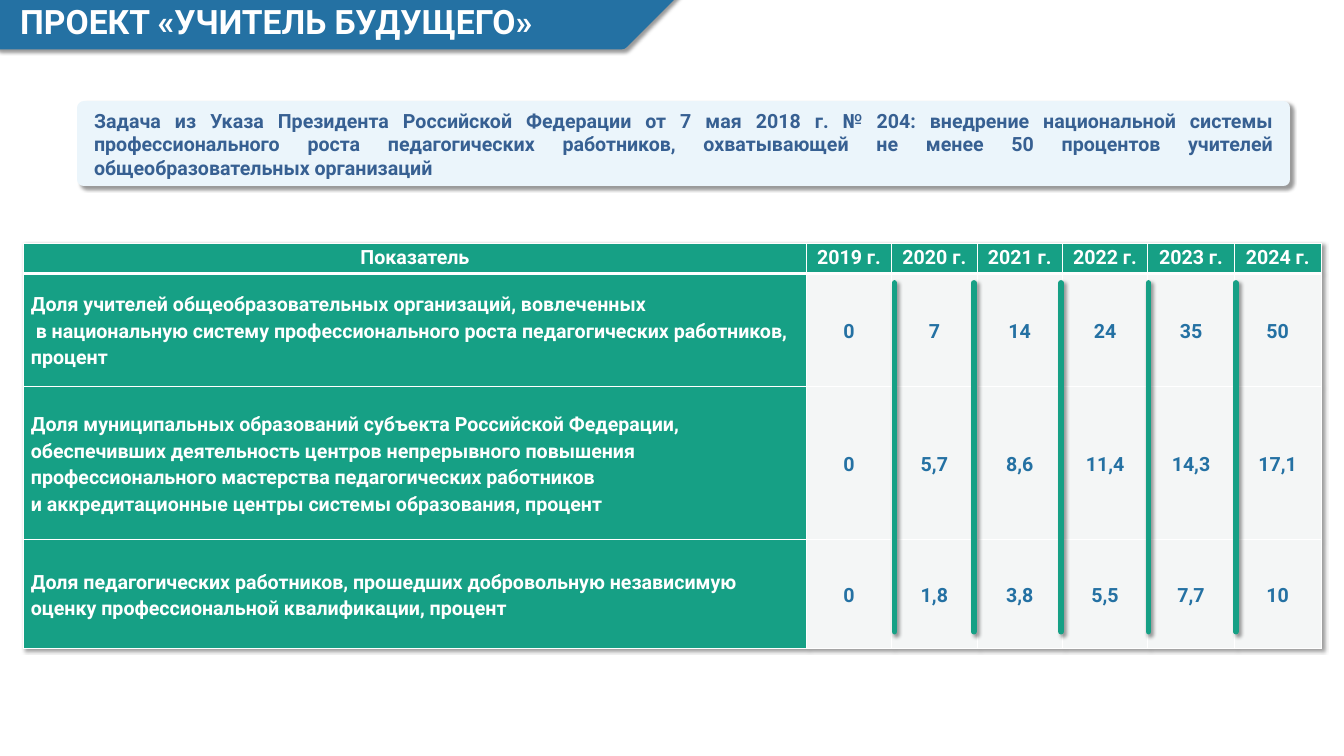
import pptx
import pptx.dml.color
import pptx.enum.shapes
import pptx.enum.text
import pptx.oxml
import pptx.oxml.ns
import pptx.util
from pptx.util import Inches

COLORS = {
    "blue": "2471A3",
    "pale_blue": "EBF5FB",
    "task_text": "376092",
    "green": "16A085",
    "cell": "F4F6F6",
    "white": "FFFFFF",
}
NAMESPACE = pptx.oxml.ns.nsdecls("a")
ALIGN = pptx.enum.text.PP_ALIGN
MIDDLE = pptx.enum.text.MSO_ANCHOR.MIDDLE
SHAPES = pptx.enum.shapes.MSO_SHAPE


def rgb(name):
    return pptx.dml.color.RGBColor.from_string(COLORS[name])


def write(text_frame, text, size, color, alignment, line_spacing=1.0):
    """Set one paragraph of bold Roboto text."""
    paragraph = text_frame.paragraphs[0]
    paragraph.text = text
    paragraph.alignment = alignment
    paragraph.line_spacing = line_spacing
    for run in paragraph.runs:
        run.font.name = "Roboto"
        run.font.size = pptx.util.Pt(size)
        run.font.bold = True
        run.font.color.rgb = rgb(color)


presentation = pptx.Presentation()
presentation.slide_width = Inches(20)
presentation.slide_height = Inches(11.25)
slide = presentation.slides.add_slide(presentation.slide_layouts[5])
shadowed = []

# Banner and title
banner = slide.shapes.add_shape(
    SHAPES.SNIP_1_RECTANGLE, Inches(0), Inches(-0.87), Inches(10), Inches(1.5))
banner.adjustments[0] = 0.5
banner.rotation = 180
banner._element.spPr.xfrm.set("flipH", "1")
slide.shapes._spTree.insert(2, banner._element)

title = slide.shapes.title
title.left, title.top = Inches(0.2), Inches(0.04)
title.width, title.height = Inches(15.24), Inches(0.62)
title.text_frame.auto_size = pptx.enum.text.MSO_AUTO_SIZE.NONE
title.text_frame.vertical_anchor = MIDDLE
write(title.text_frame, "ПРОЕКТ «УЧИТЕЛЬ БУДУЩЕГО»", 36, "white", ALIGN.LEFT, 0.9)

# Task from the decree
task = slide.shapes.add_shape(
    SHAPES.RECTANGLE, Inches(1.25), Inches(1.61), Inches(17.85), Inches(1.06))
frame = task.text_frame
frame.word_wrap = True
frame.vertical_anchor = MIDDLE
frame.margin_left = frame.margin_right = Inches(0.15)
frame.margin_top = frame.margin_bottom = Inches(0.07)
write(frame,
      "Задача из Указа Президента Российской Федерации от 7 мая 2018 г. № 204: "
      "внедрение национальной системы профессионального роста педагогических "
      "работников, охватывающей не менее 50 процентов учителей "
      "общеобразовательных организаций",
      21, "task_text", ALIGN.JUSTIFY)

for shape, color in ((banner, "blue"), (task, "pale_blue")):
    shape.fill.solid()
    shape.fill.fore_color.rgb = rgb(color)
    shape.line.color.rgb = rgb(color)
    shape.line.width = pptx.util.Pt(15)
    shadowed.append(shape)

# Indicator table
rows = [
    ["Показатель"] + [f"{year} г." for year in range(2019, 2025)],
    ["Доля учителей общеобразовательных организаций, вовлеченных\n"
     " в национальную систему профессионального роста педагогических работников, "
     "процент", "0", "7", "14", "24", "35", "50"],
    ["Доля муниципальных образований субъекта Российской Федерации, "
     "обеспечивших деятельность центров непрерывного повышения "
     "профессионального мастерства педагогических работников\n"
     "и аккредитационные центры системы образования, процент",
     "0", "5,7", "8,6", "11,4", "14,3", "17,1"],
    ["Доля педагогических работников, прошедших добровольную независимую "
     "оценку профессиональной квалификации, процент",
     "0", "1,8", "3,8", "5,5", "7,7", "10"],
]
column_widths = [11.65] + [1.27] * 4 + [1.29] * 2
row_heights = [0.45, 1.68, 2.28, 1.62]

table = slide.shapes.add_table(
    len(rows), len(column_widths),
    Inches(0.35), Inches(3.62), Inches(19.3), Inches(6.02)).table
for column, width in zip(table.columns, column_widths):
    column.width = Inches(width)
for row, height in zip(table.rows, row_heights):
    row.height = Inches(height)

for row_index, row in enumerate(rows):
    for column_index, text in enumerate(row):
        cell = table.cell(row_index, column_index)
        is_header = row_index == 0
        is_label = column_index == 0
        for side in "LRTB":
            thick = (side == "B" and is_header) or (side == "T" and row_index == 1)
            width = pptx.util.Pt(3 if thick else 1)
            cell._tc.get_or_add_tcPr().append(pptx.oxml.parse_xml(
                f'<a:ln{side} {NAMESPACE} w="{width}"><a:solidFill>'
                f'<a:srgbClr val="{COLORS["white"]}"/></a:solidFill></a:ln{side}>'))
        cell.fill.solid()
        cell.fill.fore_color.rgb = rgb("green" if is_header or is_label else "cell")
        cell.margin_left = cell.margin_right = Inches(0.07 if is_header else 0.11)
        cell.margin_top = cell.margin_bottom = 0
        if not is_header:
            cell.vertical_anchor = MIDDLE
        write(cell.text_frame, text, 21,
              "white" if is_header or is_label else "blue",
              ALIGN.LEFT if is_label and not is_header else ALIGN.CENTER, 1.15)

# Dividers between the years
for x in (13.31, 14.49, 15.79, 17.09, 18.39):
    divider = slide.shapes.add_connector(
        pptx.enum.shapes.MSO_CONNECTOR.STRAIGHT,
        Inches(x), Inches(4.21), Inches(x), Inches(9.4))
    divider.line.color.rgb = rgb("green")
    divider.line.width = pptx.util.Pt(6)
    divider.line._get_or_add_ln().set("cap", "rnd")
    shadowed.append(divider)

# Shared soft shadow
shadow_xml = (
    f'<a:effectLst {NAMESPACE}><a:outerShdw blurRad="{pptx.util.Pt(4)}" '
    f'dist="{pptx.util.Pt(3)}" dir="2700000" algn="tl" rotWithShape="0">'
    '<a:srgbClr val="000000"><a:alpha val="40000"/></a:srgbClr>'
    '</a:outerShdw></a:effectLst>')
for shape in shadowed:
    shape._element.spPr.append(pptx.oxml.parse_xml(shadow_xml))
table._tbl.tblPr.insert(0, pptx.oxml.parse_xml(shadow_xml))

presentation.save("out.pptx")
